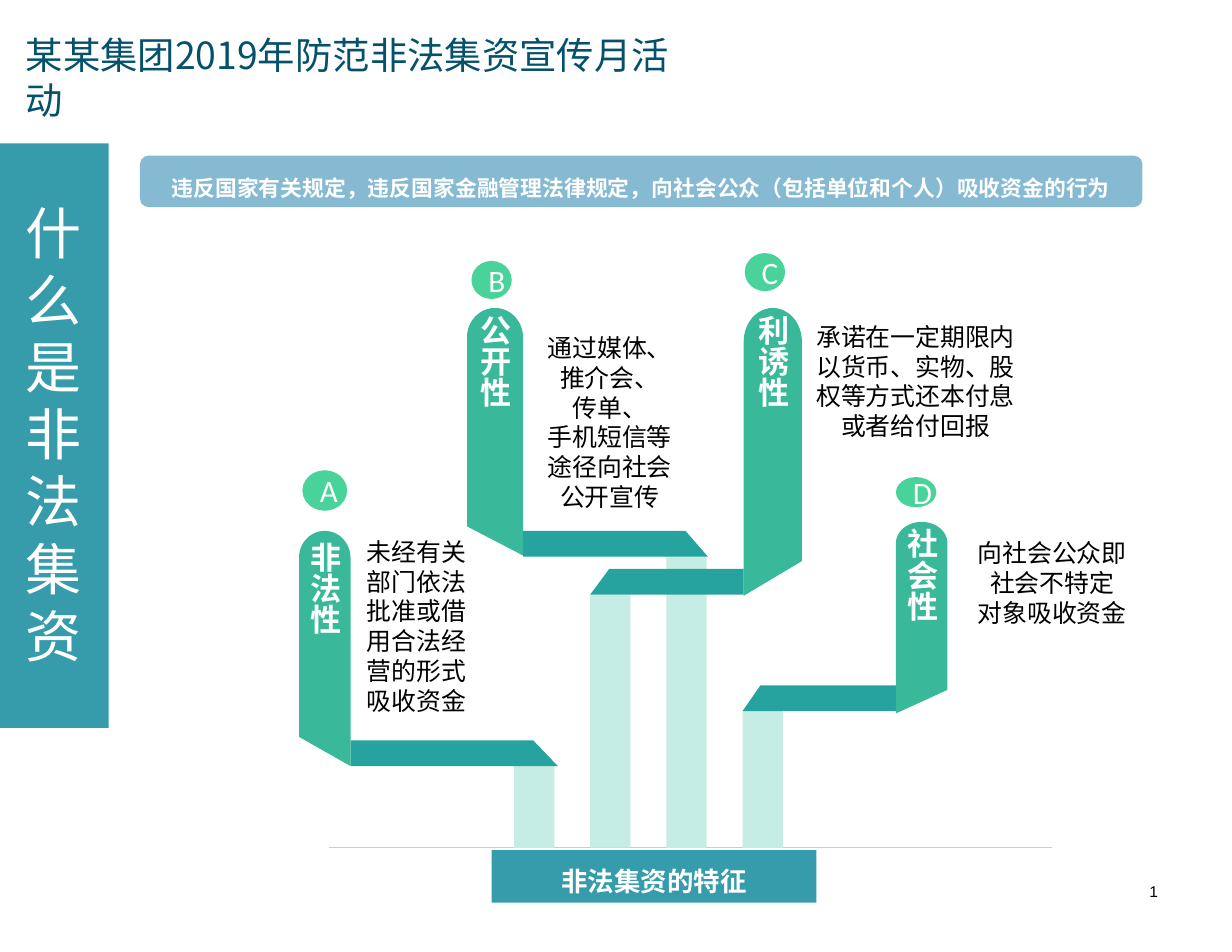
"""Build the slide on the four features of illegal fundraising."""
import math
from pptx import Presentation
from pptx import util as u
from pptx.dml.color import RGBColor
from pptx.enum import shapes, text
from pptx.oxml.ns import qn
from lxml import etree

WHITE = RGBColor(0xFF, 0xFF, 0xFF)
BLACK = RGBColor(0x00, 0x00, 0x00)
NAVY = RGBColor(0x04, 0x51, 0x6B)
TEAL = RGBColor(0x36, 0x9C, 0xAB)
SKY = RGBColor(0x86, 0xBA, 0xD2)
PALE = RGBColor(0xC5, 0xED, 0xE3)
RIBBON = RGBColor(0x26, 0xA2, 0x9F)
PILLAR = RGBColor(0x3A, 0xB8, 0x9A)
BADGE = RGBColor(0x4A, 0xD2, 0x9B)
RULE = RGBColor(0xA2, 0xE2, 0xD3)
NEAR_WHITE = RGBColor(0xFE, 0xFF, 0xFF)
SC, JP = "Noto Sans CJK SC", "Noto Sans CJK JP"
CENTER, LEFT, RIGHT = text.PP_ALIGN.CENTER, text.PP_ALIGN.LEFT, text.PP_ALIGN.RIGHT
TOP, MIDDLE = text.MSO_ANCHOR.TOP, text.MSO_ANCHOR.MIDDLE


def write(sp, lines, size, color, name=SC, bold=False, align=CENTER, anchor=TOP, spacing=1.2, **frame):
    tf = sp.text_frame
    frame_format = {"word_wrap": True, "auto_size": text.MSO_AUTO_SIZE.NONE, "vertical_anchor": anchor, **frame}
    for key, value in frame_format.items():
        setattr(tf, key, value)
    for i, line in enumerate(lines):
        p = tf.add_paragraph() if i else tf.paragraphs[0]
        p.alignment = align
        p.line_spacing = u.Pt(round(size * spacing, 1))
        r = p.add_run()
        r.text = line
        for key, value in {"name": name, "size": u.Pt(size), "bold": bold}.items():
            setattr(r.font, key, value)
        r.font.color.rgb = color
        etree.SubElement(r.font._element, qn("a:ea")).set("typeface", name)


def paint(sp, color):
    sp.shadow.inherit = False
    sp.fill.solid()
    sp.fill.fore_color.rgb = color
    sp.line.fill.background()
    return sp


prs = Presentation()
prs.slide_width, prs.slide_height = u.Inches(11), u.Inches(8.5)
s = prs.slides.add_slide(prs.slide_layouts[5])

title = s.shapes.title
for key, value in {"left": 0.13, "top": 0.24, "width": 6.21, "height": 0.5}.items():
    setattr(title, key, u.Inches(value))
write(title, ["某某集团2019年防范非法集资宣传月活动"], 24, NAVY, align=LEFT)

blocks = [
    (shapes.MSO_SHAPE.RECTANGLE, (0, 1.28, 0.97, 5.22), TEAL, None),
    (shapes.MSO_SHAPE.ROUNDED_RECTANGLE, (1.25, 1.39, 8.95, 0.46), SKY,
     ("违反国家有关规定，违反国家金融管理法律规定，向社会公众（包括单位和个人）吸收资金的行为", 14, 1.8)),
    (shapes.MSO_SHAPE.RECTANGLE, (4.39, 7.59, 2.9, 0.47), TEAL, ("非法集资的特征", 17, 1.56)),
]
for kind, box, color, label in blocks:
    sp = paint(s.shapes.add_shape(kind, *map(u.Inches, box)), color)
    if label:
        write(sp, [label[0]], label[1], WHITE, bold=True, anchor=MIDDLE, spacing=label[2])

line = s.shapes.add_connector(shapes.MSO_CONNECTOR.STRAIGHT, *map(u.Inches, (2.94, 7.57, 9.39, 7.57)))
line.line.color.rgb = RULE
line.line.width = u.Pt(0.75)
etree.SubElement(line._element.spPr, qn("a:effectLst"))

for i, top in enumerate((6.84, 5.31, 4.96, 6.34)):
    box = (4.59 + 0.68 * i, top, 0.36, 7.57 - top)
    paint(s.shapes.add_shape(shapes.MSO_SHAPE.RECTANGLE, *map(u.Inches, box)), PALE)

ribbons = [(3.13, 4.76, 4.98, 6.61), (4.67, 6.12, 6.32, 4.74), (6.64, 5.44, 5.27, 5.08), (8, 6.79, 6.63, 6.12)]
for root, upper, lower, top in ribbons:
    points = [(root, top), (upper, top), (lower, top + 0.23), (root, top + 0.23)]
    points = [(u.Inches(x), u.Inches(y)) for x, y in points]
    fb = s.shapes.build_freeform(*points[0])
    fb.add_line_segments(points[1:])
    paint(fb.convert_to_shape(), RIBBON)

pillars = [
    ("非法性", 2.67, 4.74, 0.46, 0.24, 6.58, 6.84, 0.1),
    ("公开性", 4.17, 2.75, 0.5, 0.26, 4.7, 4.96, 0.06),
    ("利诱性", 6.64, 2.75, 0.52, 0.3, 5.32, 5.01, 0.06),
    ("社会性", 8, 4.66, 0.46, 0.19, 6.37, 6.16, 0.06),
]
for label, left, top, width, cap, left_end, right_end, inset in pillars:
    points = [(left, left_end)]
    for step in range(25):
        angle = math.pi * step / 24
        points.append((left + width / 2 * (1 - math.cos(angle)), top + cap * (1 - math.sin(angle))))
    points.append((left + width, right_end))
    points = [(u.Inches(x), u.Inches(y)) for x, y in points]
    fb = s.shapes.build_freeform(*points[0])
    fb.add_line_segments(points[1:])
    sp = paint(fb.convert_to_shape(), PILLAR)
    write(sp, [label], 20, NEAR_WHITE, bold=True, align=LEFT, anchor=MIDDLE,
          margin_left=0, margin_right=0, margin_top=u.Inches(inset), margin_bottom=0)
    sp.text_frame._txBody.bodyPr.set("vert", "eaVert")

badges = {"A": (2.7, 4.2, 0.4, 0.36), "B": (4.21, 2.33, 0.36, 0.34),
          "C": (6.65, 2.26, 0.36, 0.34), "D": (8, 4.26, 0.36, 0.27)}
for letter, box in badges.items():
    sp = paint(s.shapes.add_shape(shapes.MSO_SHAPE.OVAL, *map(u.Inches, box)), BADGE)
    write(sp, [letter], 20, NEAR_WHITE, name="Calibri", anchor=MIDDLE)

black = {"size": 16, "color": BLACK}
texts = [
    ((0.12, 1.72, 0.72, 4.34), ["什么是非法集资"], {"size": 36, "color": WHITE, "name": JP}),
    ((3.17, 4.74, 1.1, 1.72), ["未经有关部门依法批准或借用合法经营的形式吸收资金"], black),
    ((4.78, 2.92, 1.33, 1.72), ["通过媒体、推介会、", "传单、", "手机短信等途径向社会公开宣传"], black),
    ((7.14, 2.82, 2.07, 1.18), ["承诺在一定期限内以货币、实物、股权等方式还本付息或者给付回报"], black),
    ((8.54, 4.75, 1.71, 0.91), ["向社会公众即社会不特定", "对象吸收资金"], black),
    ((9.83, 7.82, 0.59, 0.28), ["1"],
     {"size": 10, "color": BLACK, "name": "Arial", "align": RIGHT, "anchor": MIDDLE,
      "margin_left": u.Inches(0.08), "margin_right": u.Inches(0.08),
      "margin_top": u.Inches(0.02), "margin_bottom": u.Inches(0.02)}),
]
for box, lines, fmt in texts:
    write(s.shapes.add_textbox(*map(u.Inches, box)), lines, **fmt)

prs.save("out.pptx")
